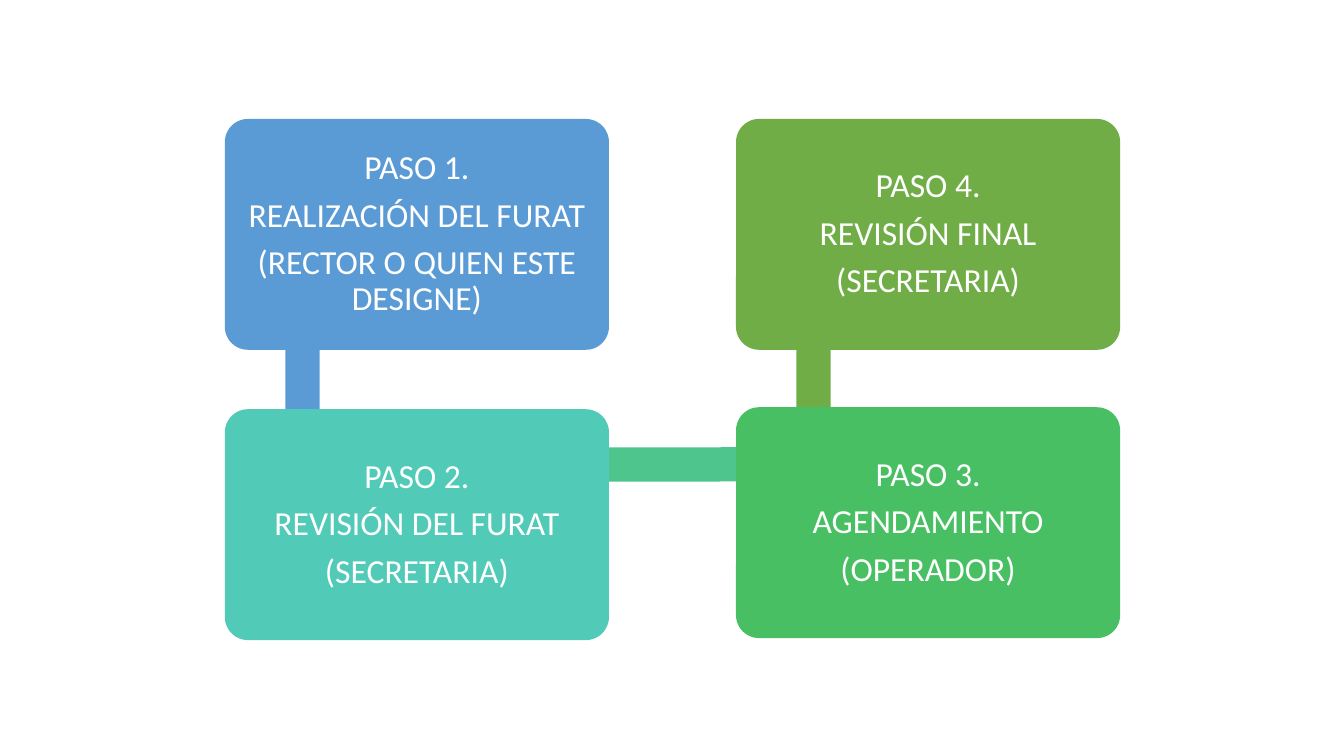
from pptx import Presentation
from pptx.dml.color import RGBColor
from pptx.enum.shapes import MSO_SHAPE as Form
from pptx.enum.text import MSO_ANCHOR as Anchor, PP_ALIGN as Align
from pptx.util import Inches, Pt

BLUE = RGBColor(0x5B, 0x9B, 0xD5)
TEAL = RGBColor(0x52, 0xCA, 0xB8)
MINT = RGBColor(0x4D, 0xC5, 0x8D)
GREEN = RGBColor(0x49, 0xBF, 0x64)
OLIVE = RGBColor(0x70, 0xAD, 0x47)
WHITE = RGBColor(0xFF, 0xFF, 0xFF)

# Grid: two columns, two rows
LEFT, RIGHT = 2.23, 7.3
TOP, LOW = 1.18, 4.06
WIDE, HIGH = 3.81, 2.29
THICK = 0.34


def write(frame, lines, size=24, color=WHITE, font="Calibri", gap=8):
    """Fill a text frame with centred paragraphs."""
    frame.word_wrap = True
    frame.vertical_anchor = Anchor.MIDDLE
    frame.margin_left = frame.margin_right = Inches(0.1)
    frame.margin_top = frame.margin_bottom = Inches(0.1)
    for i, line in enumerate(lines):
        para = frame.add_paragraph() if i else frame.paragraphs[0]
        para.text = line
        para.alignment = Align.CENTER
        para.line_spacing = 0.9
        para.space_after = Pt(gap)
        para.font.name = font
        para.font.size = Pt(size)
        para.font.color.rgb = color


class Board:
    """Holds the slide and the style of its shapes."""

    def __init__(self, slide):
        self.slide = slide

    def shape(self, form, x, y, w, h, fill):
        item = self.slide.shapes.add_shape(
            form, Inches(x), Inches(y), Inches(w), Inches(h))
        item.shadow.inherit = False
        item.fill.solid()
        item.fill.fore_color.rgb = fill
        item.line.fill.background()
        return item

    def bar(self, x, y, w, h, fill, turn=0):
        self.shape(Form.RECTANGLE, x, y, w, h, fill).rotation = turn

    def step(self, x, y, fill, lines):
        card = self.shape(Form.ROUNDED_RECTANGLE, x, y, WIDE, HIGH, fill)
        card.adjustments[0] = 0.1
        write(card.text_frame, lines)


def main():
    deck = Presentation()
    deck.slide_width, deck.slide_height = Inches(13.33), Inches(7.5)
    board = Board(deck.slides.add_slide(deck.slide_layouts[6]))

    # Links, each partly hidden by the cards it joins
    board.bar(LEFT + 0.6, 1.75, THICK, 2.86, BLUE)
    board.bar(3.01, 4.44, 5.06, THICK, MINT, turn=-0.1)
    board.bar(RIGHT + 0.6, 1.75, THICK, 2.84, OLIVE)

    # Steps, running down the left and up the right
    steps = [
        (LEFT, TOP, BLUE, "REALIZACIÓN DEL FURAT",
         "(RECTOR O QUIEN ESTE DESIGNE)"),
        (LEFT, LOW, TEAL, "REVISIÓN DEL FURAT", "(SECRETARIA)"),
        (RIGHT, LOW - 0.02, GREEN, "AGENDAMIENTO", "(OPERADOR)"),
        (RIGHT, TOP, OLIVE, "REVISIÓN FINAL", "(SECRETARIA)"),
    ]
    for num, (x, y, fill, task, who) in enumerate(steps, 1):
        board.step(x, y, fill, [f"PASO {num}.", task, who])

    deck.save("out.pptx")


if __name__ == "__main__":
    main()
